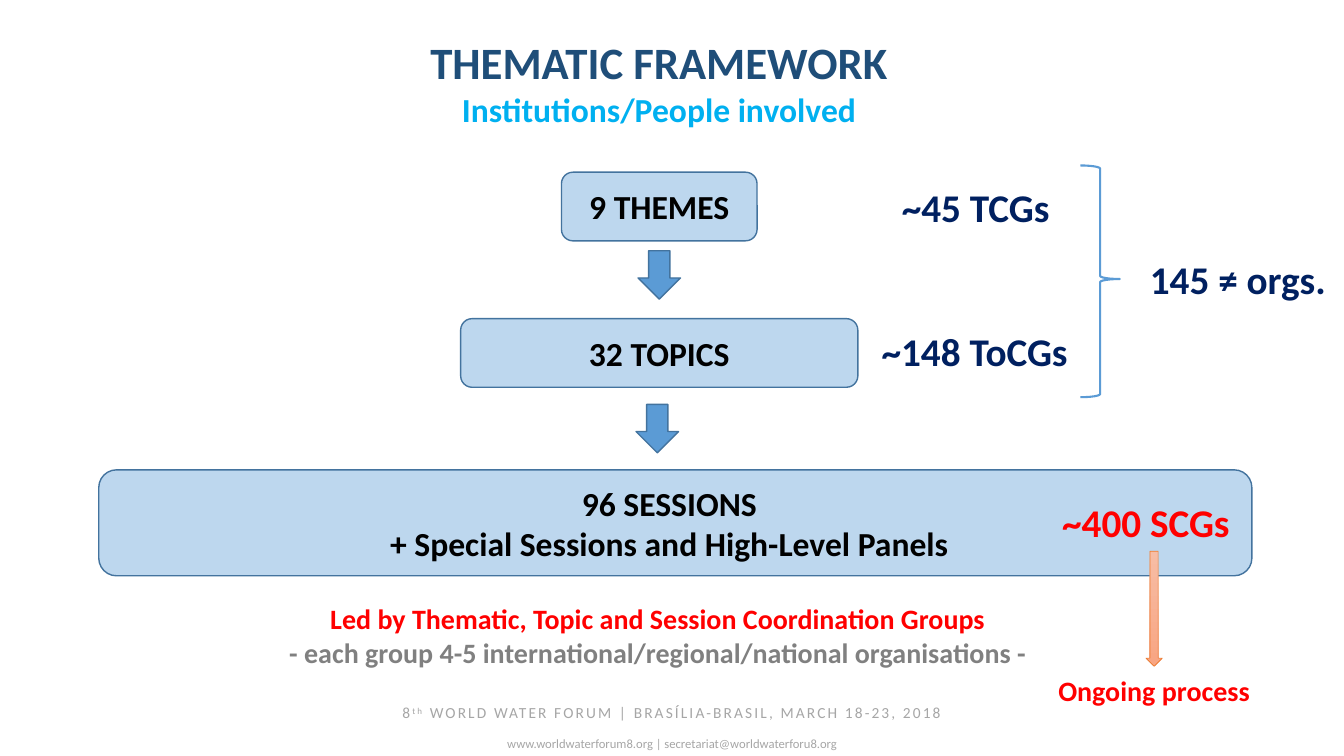
from dataclasses import dataclass

import pptx
import pptx.dml.color
import pptx.enum.shapes
import pptx.enum.text
import pptx.util

Cm, Pt = pptx.util.Cm, pptx.util.Pt
SHAPE = pptx.enum.shapes.MSO_SHAPE
ALIGN = pptx.enum.text.PP_ALIGN
ANCHOR = pptx.enum.text.MSO_ANCHOR

BLACK, RED, GREY, NAVY = "000000", "FF0000", "808080", "002060"
BLUE, OUTLINE, PALE, SILVER = "5B9BD5", "43739E", "BDD7EE", "A6A6A6"


@dataclass
class Line:
    text: str
    size: float
    color: str
    bold: bool = True
    before: float = 0


@dataclass
class Label:
    at: tuple[float, float, float, float]
    lines: list[Line]
    align: ALIGN = ALIGN.CENTER
    wrap: bool = False


@dataclass
class Box:
    at: tuple[float, float, float, float]
    texts: list[str]
    right_inset: float = 0.25


def rgb(value: str) -> pptx.dml.color.RGBColor:
    return pptx.dml.color.RGBColor.from_string(value)


def add_run(p, text: str, line: Line):
    r = p.add_run()
    r.text = text
    formats = {"name": "Calibri", "size": Pt(line.size), "bold": line.bold}
    for name, value in formats.items():
        setattr(r.font, name, value)
    r.font.color.rgb = rgb(line.color)
    return r


def write(tf, lines: list[Line], align: ALIGN) -> None:
    for i, line in enumerate(lines):
        p = tf.paragraphs[0] if i == 0 else tf.add_paragraph()
        p.alignment = align
        if line.before:
            p.space_before = Pt(line.before)
        if line.text:
            add_run(p, line.text, line)


def add_label(s, label: Label):
    sp = s.shapes.add_textbox(*map(Cm, label.at))
    sp.text_frame.word_wrap = label.wrap
    write(sp.text_frame, label.lines, label.align)
    return sp


def add_shape(s, kind: SHAPE, at: tuple, line: str, width: float, fill: str = ""):
    sp = s.shapes.add_shape(kind, *map(Cm, at))
    sp.shadow.inherit = False
    sp.line.color.rgb = rgb(line)
    sp.line.width = Pt(width)
    if fill:
        sp.fill.solid()
        sp.fill.fore_color.rgb = rgb(fill)
    else:
        sp.fill.background()
    return sp


def add_box(s, box: Box) -> None:
    sp = add_shape(s, SHAPE.ROUNDED_RECTANGLE, box.at, OUTLINE, 1, PALE)
    tf = sp.text_frame
    formats = {"word_wrap": True, "vertical_anchor": ANCHOR.MIDDLE,
               "margin_right": Cm(box.right_inset)}
    for name, value in formats.items():
        setattr(tf, name, value)
    write(tf, [Line(text, 24, BLACK) for text in box.texts], ALIGN.CENTER)


def add_footer(s) -> None:
    event = Line("", 11, SILVER, bold=False)
    contact = Line("www.worldwaterforum8.org | secretariat@worldwaterforu8.org",
                   9, SILVER, bold=False, before=9.8)
    sp = add_label(s, Label((0, 17.6, 33.87, 1.45), [event, contact], wrap=True))
    p = sp.text_frame.paragraphs[0]
    for text, baseline in (("8", 0), ("th", 30000),
                           (" WORLD WATER FORUM | BRASÍLIA-BRASIL, MARCH 18-23, 2018", 0)):
        rpr = add_run(p, text, event).font._element
        rpr.set("spc", "150")
        rpr.set("baseline", str(baseline))


BOXES = [
    Box((14.15, 4.34, 4.93, 1.73), ["9 THEMES"]),
    Box((11.61, 8.03, 10.01, 1.73), ["32 TOPICS"]),
    Box((2.49, 11.84, 29.06, 2.67),
        ["96 SESSIONS", "+ Special Sessions and High-Level Panels"], 0.55),
]
STEP_ARROWS = [(16.08, 6.32, 1.07, 1.22), (16.03, 10.19, 1.07, 1.22)]
LABELS = [
    Label((4.09, 0.76, 25.04, 2.64),
          [Line("THEMATIC FRAMEWORK", 32, "1F4E79"),
           Line("Institutions/People involved", 24, "00B0F0")], wrap=True),
    Label((6.96, 15.04, 19.23, 1.96),
          [Line("Led by Thematic, Topic and Session Coordination Groups", 20, RED),
           Line("- each group 4-5 international/regional/national organisations -", 20, GREY)]),
    Label((22.48, 4.5, 4.29, 1.45), [Line("~45 TCGs", 28, NAVY)], ALIGN.LEFT),
    Label((21.97, 8.13, 5.26, 1.45), [Line("~148 ToCGs", 28, NAVY)], ALIGN.LEFT),
    Label((28.73, 6.32, 5, 1.45), [Line("145 ≠ orgs.", 28, NAVY)], ALIGN.LEFT),
    Label((26.52, 12.42, 4.8, 1.45), [Line("~400 SCGs", 28, RED)], ALIGN.LEFT),
    Label((26.42, 16.84, 5.38, 1.12), [Line("Ongoing process", 20, RED)], ALIGN.LEFT),
]


def main() -> None:
    prs = pptx.Presentation()
    prs.slide_width, prs.slide_height = Cm(33.87), Cm(19.05)
    s = prs.slides.add_slide(prs.slide_layouts[6])

    add_footer(s)

    # Themes, topics and sessions
    for box in BOXES:
        add_box(s, box)
    for at in STEP_ARROWS:
        add_shape(s, SHAPE.DOWN_ARROW, at, OUTLINE, 1, BLUE)

    # Heading and group counts
    for label in LABELS:
        add_label(s, label)

    # Brace joining theme and topic groups
    brace = add_shape(s, SHAPE.RIGHT_BRACE, (27.23, 4.17, 0.99, 5.84), BLUE, 1.5)
    brace.adjustments[0], brace.adjustments[1] = 0.08, 0.49

    # Arrow to the ongoing process
    arrow = add_shape(s, SHAPE.DOWN_ARROW, (28.88, 13.89, 0.41, 2.9), "ED7D31", 0.5)
    arrow.fill.gradient()
    arrow.fill.gradient_angle = 270
    for stop, color in zip(arrow.fill.gradient_stops, ("F7BDA5", "F8A582")):
        stop.color.rgb = rgb(color)

    prs.save("out.pptx")


if __name__ == "__main__":
    main()
